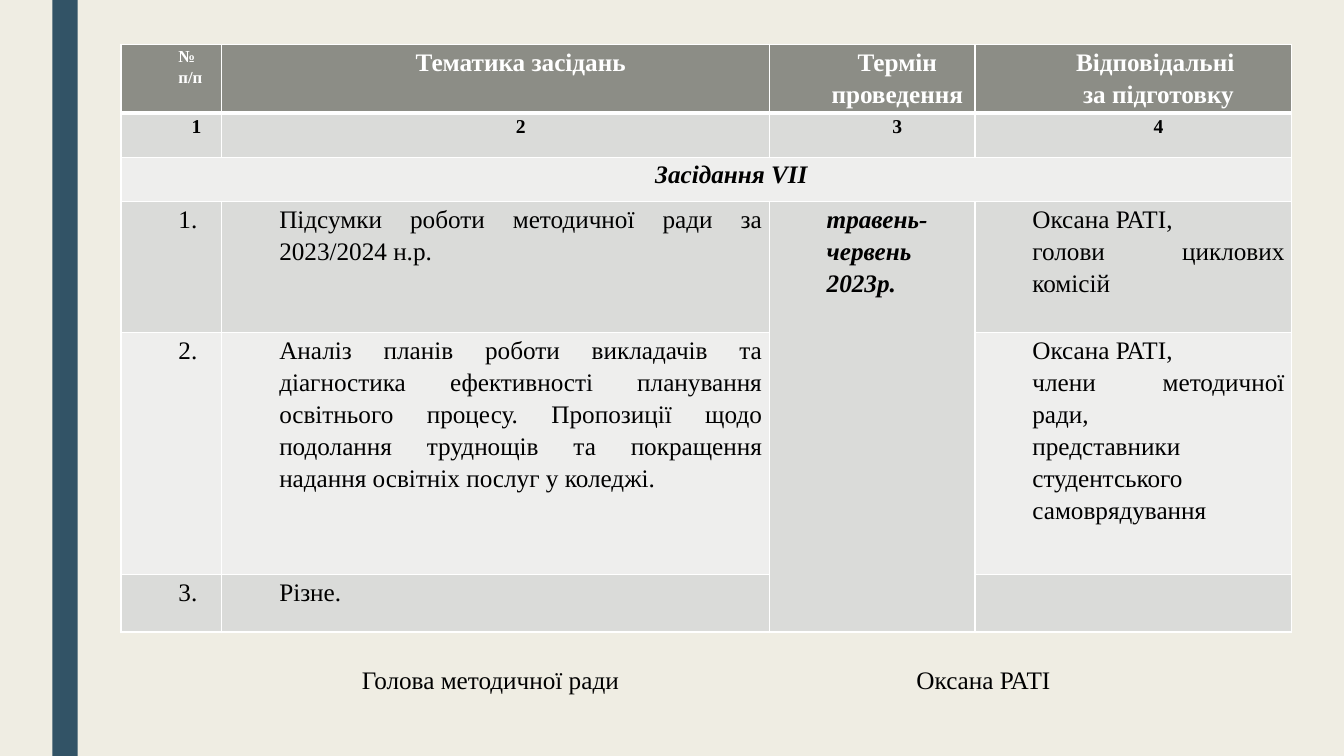
from lxml import etree
from pptx import Presentation, util as u
from pptx.dml.color import RGBColor
from pptx.enum import shapes, text
from pptx.oxml.ns import qn

FONT = "Times New Roman"
BACK = RGBColor(0xEF, 0xED, 0xE3)
STRIPE = RGBColor(0x32, 0x53, 0x66)
HEAD = RGBColor(0x8C, 0x8D, 0x86)
BANDS = RGBColor(0xDA, 0xDB, 0xD9), RGBColor(0xEE, 0xEE, 0xED)
WHITE = RGBColor(0xFF, 0xFF, 0xFF)
BLACK = RGBColor(0, 0, 0)

COLS = [1, 5.43, 2.04, 3.14]
ROWS = [0.68, 0.44, 0.44, 1.3, 2.4, 0.57]
LEFT, TOP, WIDTH = 1.2, 0.44, 11.6
# One list of paragraphs per cell
CELLS = [
    [["№", "п/п"], ["Тематика засідань"], ["Термін проведення"],
     ["Відповідальні ", "за підготовку"]],
    [["1"], ["2"], ["3"], ["4"]],
    [["Засідання VІІ"], [], [], []],
    [["1."], ["Підсумки роботи методичної ради за 2023/2024 н.р."],
     ["травень-червень 2023р."], ["Оксана РАТІ,", "голови циклових комісій"]],
    [["2."],
     ["Аналіз планів роботи викладачів та діагностика ефективності планування "
      "освітнього процесу. Пропозиції щодо подолання труднощів та покращення "
      "надання освітніх послуг у коледжі."],
     [],
     ["Оксана РАТІ,", "члени методичної ради,",
      "представники студентського самоврядування"]],
    [["3."], ["Різне."], [], []],
]
MERGES = [((2, 0), (2, 3)), ((3, 2), (5, 2))]
SIGNATURE = "Голова методичної ради\tОксана РАТІ"
SIGN_LEFT, SIGN_TAB = 3.59, 5.5


def add_run(p, words, size, color=BLACK, bold=False, italic=False):
    r = p.add_run()
    r.text = words
    f = r.font
    f.name, f.size, f.bold, f.italic = FONT, u.Pt(size), bold, italic
    f.color.rgb = color


def set_borders(cell, row):
    """White cell edges, with a thick one below the header."""
    thick = {0: "lnB", 1: "lnT"}.get(row)
    tcPr = cell._tc.get_or_add_tcPr()
    for i, side in enumerate(("lnL", "lnR", "lnT", "lnB")):
        ln = etree.Element(qn("a:" + side), w=str(u.Pt(3 if side == thick else 1)))
        fill = etree.SubElement(ln, qn("a:solidFill"))
        etree.SubElement(fill, qn("a:srgbClr"), val=str(WHITE))
        tcPr.insert(i, ln)


def text_size(row, col):
    if row == 1:
        return 14
    return 12 if (row, col) == (0, 0) else 18


def fill_cell(cell, row, col):
    cell.margin_left = cell.margin_right = u.Inches(0.07)
    cell.margin_top = cell.margin_bottom = 0
    cell.fill.solid()
    cell.fill.fore_color.rgb = BANDS[(row - 1) % 2] if row else HEAD
    set_borders(cell, row)
    period = row >= 3 and col == 2
    centred = row < 3 and (row, col) != (0, 0)
    tf = cell.text_frame
    for i, words in enumerate(CELLS[row][col]):
        p = tf.add_paragraph() if i else tf.paragraphs[0]
        p.alignment = text.PP_ALIGN.CENTER if centred else text.PP_ALIGN.JUSTIFY
        p.line_spacing = 1.15
        pPr = p._p.get_or_add_pPr()
        pPr.set("marL", str(u.Inches(0.5)))
        pPr.set("indent", "0")
        add_run(p, words, text_size(row, col), BLACK if row else WHITE,
                bold=row < 3 or period, italic=row == 2 or period)


def add_schedule(s):
    tbl = s.shapes.add_table(len(ROWS), len(COLS), u.Inches(LEFT), u.Inches(TOP),
                             u.Inches(WIDTH), u.Inches(sum(ROWS))).table
    for column, width in zip(tbl.columns, COLS):
        column.width = u.Inches(width)
    for line, height in zip(tbl.rows, ROWS):
        line.height = u.Inches(height)
    for start, end in MERGES:
        tbl.cell(*start).merge(tbl.cell(*end))
    for row in range(len(ROWS)):
        for col in range(len(COLS)):
            fill_cell(tbl.cell(row, col), row, col)


def add_signature(s):
    sp = s.shapes.add_textbox(u.Inches(LEFT), u.Inches(6.54), u.Inches(WIDTH), u.Inches(0.4))
    tf = sp.text_frame
    tf.word_wrap = True
    tf.margin_left = u.Inches(SIGN_LEFT - LEFT)
    p = tf.paragraphs[0]
    tabs = etree.SubElement(p._p.get_or_add_pPr(), qn("a:tabLst"))
    etree.SubElement(tabs, qn("a:tab"), pos=str(u.Inches(SIGN_TAB)), algn="l")
    add_run(p, SIGNATURE, 18)


def main():
    prs = Presentation()
    prs.slide_width, prs.slide_height = u.Inches(13.33), u.Inches(7.5)
    s = prs.slides.add_slide(prs.slide_layouts[6])
    s.background.fill.solid()
    s.background.fill.fore_color.rgb = BACK
    stripe = s.shapes.add_shape(shapes.MSO_SHAPE.RECTANGLE, u.Inches(0.52), 0,
                                u.Inches(0.25), prs.slide_height)
    stripe.shadow.inherit = False
    stripe.fill.solid()
    stripe.fill.fore_color.rgb = STRIPE
    stripe.line.fill.background()
    add_schedule(s)
    add_signature(s)
    prs.save("out.pptx")


if __name__ == "__main__":
    main()
